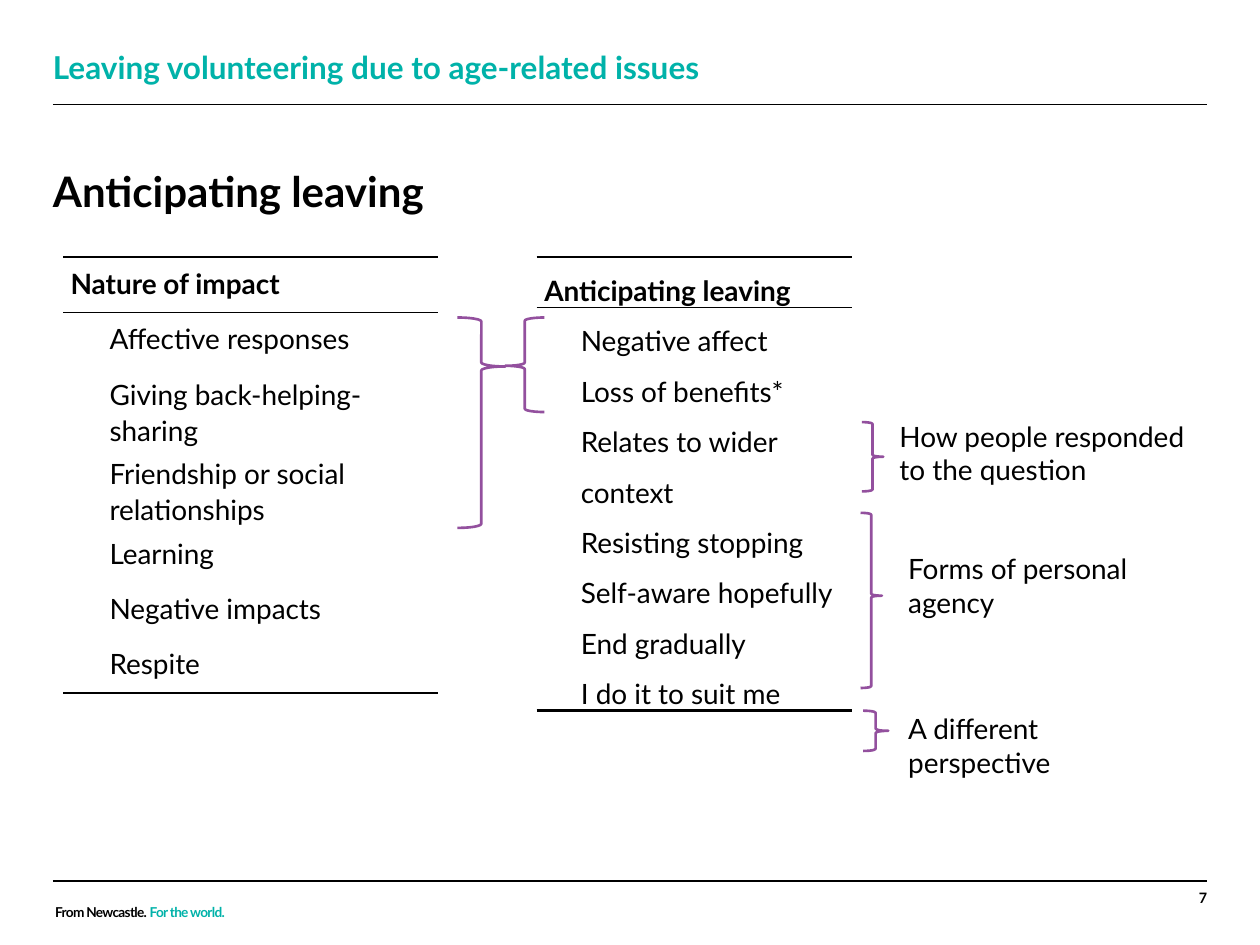
from pptx import Presentation
from pptx.dml.color import RGBColor
from pptx.enum.shapes import MSO_CONNECTOR, MSO_SHAPE
from pptx.enum.text import MSO_ANCHOR, PP_ALIGN
from pptx.oxml.ns import qn
from pptx.util import Inches, Pt
from lxml import etree

LEFT, RIGHT = PP_ALIGN.LEFT, PP_ALIGN.RIGHT
TOP, MIDDLE, BOTTOM = MSO_ANCHOR.TOP, MSO_ANCHOR.MIDDLE, MSO_ANCHOR.BOTTOM
LBRACE, RBRACE = MSO_SHAPE.LEFT_BRACE, MSO_SHAPE.RIGHT_BRACE
COLORS = {"ink": "000000", "teal": "00B2A9", "purple": "93509E"}


def write(par, text, size, color="ink", bold=False):
    run = par.add_run()
    run.text = text
    look = {"name": "Lato", "size": Pt(size), "bold": bold}
    for key, value in look.items():
        setattr(run.font, key, value)
    run.font.color.rgb = RGBColor.from_string(COLORS[color])
    return run


def place(shape, box, insets=None):
    """Set position, insets and wrapping; return the first paragraph."""
    for key, value in zip(("left", "top", "width", "height"), box):
        setattr(shape, key, Inches(value))
    frame = shape.text_frame
    frame.word_wrap = True
    sides = ("margin_left", "margin_top", "margin_right", "margin_bottom")
    for key, value in zip(sides, insets or ()):
        setattr(frame, key, Inches(value))
    return frame.paragraphs[0]


prs = Presentation()
prs.slide_width, prs.slide_height = Inches(10), Inches(7.5)
slide = prs.slides.add_slide(prs.slide_layouts[1])
shapes = slide.shapes

# Rules above and below the content
for y in (0.83, 6.99):
    rule = shapes.add_connector(MSO_CONNECTOR.STRAIGHT, Inches(0.42), Inches(y),
                                Inches(9.58), Inches(y))
    rule.line.width = Pt(1)
    rule.line.color.rgb = RGBColor.from_string(COLORS["ink"])
    etree.SubElement(rule._element.spPr, qn("a:effectLst"))

# Title and section heading
par = place(shapes.title, (0.42, 1.28, 6.34, 0.43), (0, 0, 0, 0))
shapes.title.text_frame.vertical_anchor = BOTTOM
par.alignment = LEFT
write(par, "Anticipating leaving", 24, bold=True)

body = slide.placeholders[1]
par = place(body, (0.42, 0.35, 6.83, 0.34), (0, 0, 0, 0.2))
props = par._p.get_or_add_pPr()
props.set("marL", "0")
props.set("indent", "0")
etree.SubElement(props, qn("a:buNone"))
par.line_spacing = 1.1
par.space_before = Pt(0)
write(par, "Leaving volunteering due to age-related issues", 18, "teal", True)

# Footer
box = shapes.add_textbox(0, 0, 0, 0)
par = place(box, (0.34, 7.1, 1.74, 0.25))
for text, color in (("From Newcastle. ", "ink"), ("For the world.", "teal")):
    run = write(par, text, 13.5, color, True)
    for key, value in {"baseline": "30000", "spc": "-40"}.items():
        run._r.get_or_add_rPr().set(key, value)

box = shapes.add_textbox(0, 0, 0, 0)
par = place(box, (9.06, 7.06, 0.52, 0.38), (0, 0, 0, 0))
par.alignment = RIGHT
write(par, "7", 8.2, bold=True)

# Theme lists: the first row is the heading, borders go round it and at the end
tables = [
    {"x": 0.5, "width": 2.98, "row": 0.44, "top": 0.06, "indent": 0.31,
     "spacing": 1.07, "edge": 1, "anchors": (TOP, TOP),
     "rows": ["Nature of impact", "Affective responses",
              "Giving back-helping-sharing",
              "Friendship or social relationships", "Learning",
              "Negative impacts", "Respite"]},
    {"x": 4.26, "width": 2.5, "row": 0.4, "top": 0, "indent": 0.29,
     "spacing": 1.5, "edge": 1.5, "anchors": (MIDDLE, BOTTOM),
     "rows": ["Anticipating leaving", "Negative affect", "Loss of benefits*",
              "Relates to wider\ncontext", "Resisting stopping",
              "Self-aware hopefully", "End gradually", "I do it to suit me"]},
]
for spec_ in tables:
    rows = spec_["rows"]
    last = len(rows) - 1
    table = shapes.add_table(len(rows), 1, Inches(spec_["x"]), Inches(2.04),
                             Inches(spec_["width"]),
                             Inches(spec_["row"] * len(rows))).table
    table.first_row = table.horz_banding = False
    for i, text in enumerate(rows):
        cell = table.cell(i, 0)
        cell.margin_left = cell.margin_right = Inches(0.06)
        cell.margin_top, cell.margin_bottom = Inches(spec_["top"]), 0
        cell.vertical_anchor = spec_["anchors"][i > 0]
        for j, line in enumerate(text.split("\n")):
            frame = cell.text_frame
            par = frame.add_paragraph() if j else frame.paragraphs[0]
            if i:
                par._p.get_or_add_pPr().set("marL", str(Inches(spec_["indent"])))
            par.line_spacing = spec_["spacing"]
            write(par, line, 16, bold=i == 0)
        edges = {"lnL": 0, "lnR": 0,
                 "lnT": {0: spec_["edge"], 1: 1}.get(i, 0),
                 "lnB": {0: 1, last: spec_["edge"]}.get(i, 0)}
        for tag, width in edges.items():
            edge = etree.SubElement(cell._tc.get_or_add_tcPr(), qn("a:" + tag),
                                    w=str(Pt(width)))
            if width:
                fill = etree.SubElement(edge, qn("a:solidFill"))
                etree.SubElement(fill, qn("a:srgbClr"), val=COLORS["ink"])
            else:
                etree.SubElement(edge, qn("a:noFill"))
        cell.fill.background()

# Braces linking the themes: kind, box, position of the point
braces = [
    (RBRACE, (3.63, 2.52, 0.38, 1.67), 0.233),
    (LBRACE, (4.01, 2.52, 0.31, 0.75), 0.511),
    (RBRACE, (6.84, 3.35, 0.17, 0.55), 0.5),
    (RBRACE, (6.83, 4.07, 0.17, 1.39), 0.473),
    (RBRACE, (6.85, 5.64, 0.2, 0.32), 0.5),
]
for kind, spot, point in braces:
    brace = shapes.add_shape(kind, *map(Inches, spot))
    brace.adjustments[1] = point
    brace.shadow.inherit = False
    brace.fill.background()
    brace.line.width = Pt(1.5)
    brace.line.color.rgb = RGBColor.from_string(COLORS["purple"])

# Notes beside the braces
notes = [
    ("How people responded to the question", (7.04, 3.28, 2.69, 0.64)),
    ("Forms of personal agency", (7.11, 4.33, 2.53, 0.37)),
    ("A different perspective", (7.11, 5.6, 2.28, 0.37)),
]
for text, spot in notes:
    box = shapes.add_textbox(0, 0, 0, 0)
    write(place(box, spot), text, 16)

prs.save("out.pptx")
